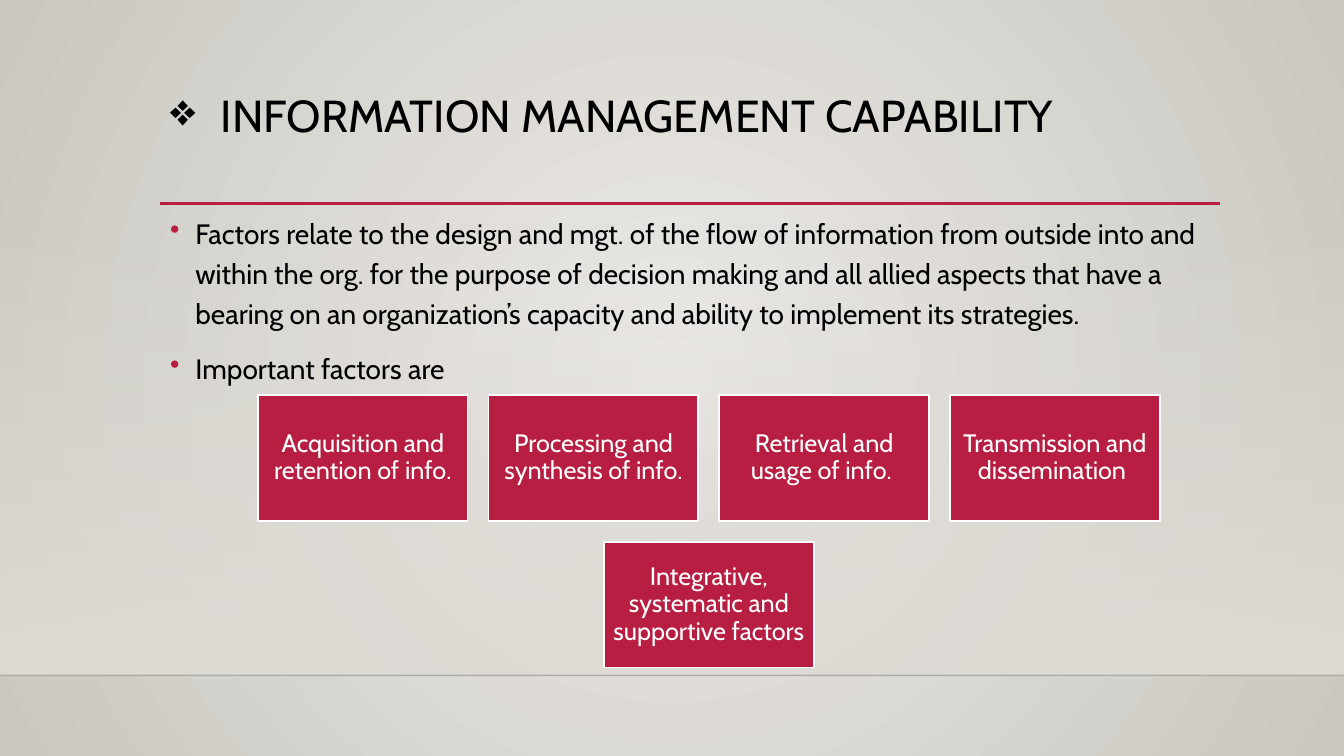
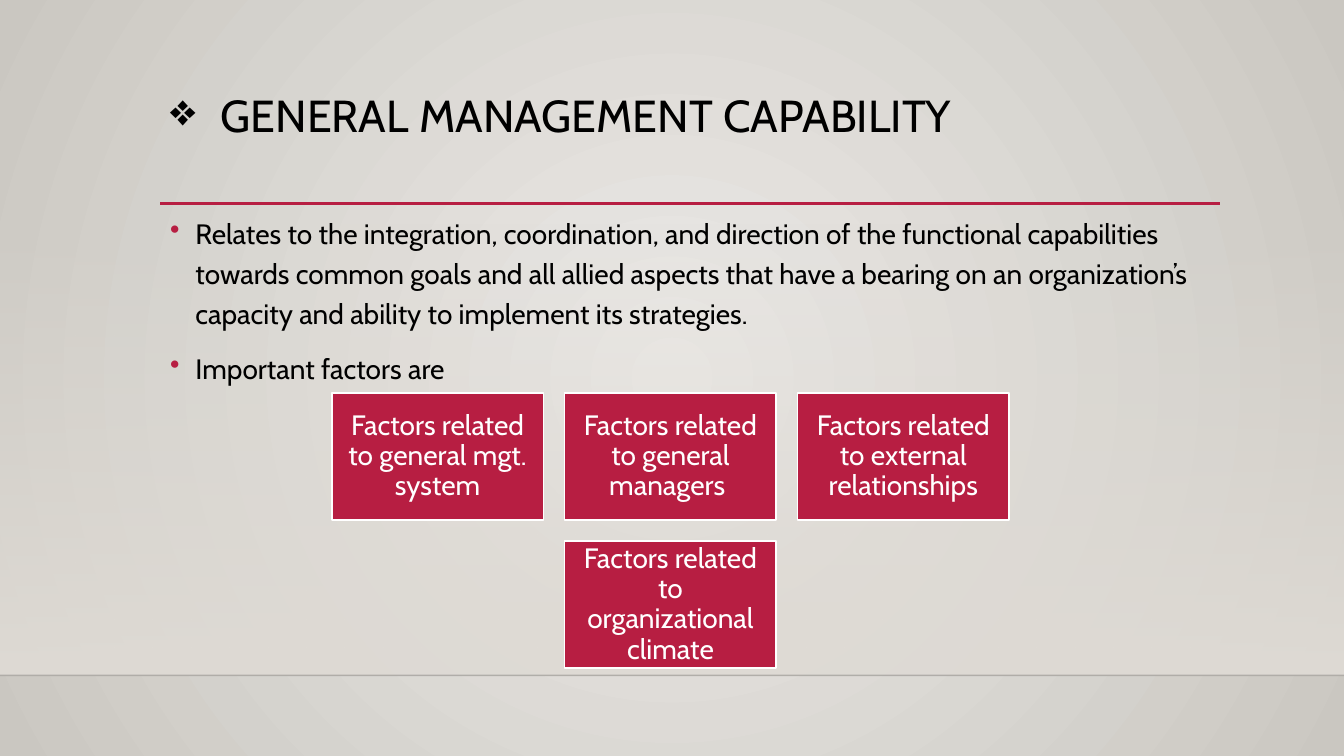
from dataclasses import dataclass

import pptx
import pptx.dml.color
import pptx.enum.shapes
import pptx.enum.text
import pptx.oxml
import pptx.oxml.ns
import pptx.shapes.autoshape
import pptx.shapes.connector
import pptx.slide
import pptx.text.text
import pptx.util

Inches = pptx.util.Inches
Pt = pptx.util.Pt
qn = pptx.oxml.ns.qn
ALIGN = pptx.enum.text.PP_ALIGN
ANCHOR = pptx.enum.text.MSO_ANCHOR
NS = pptx.oxml.ns.nsdecls("a")


@dataclass(frozen=True)
class Theme:
    font: str = "Cabin"
    ink: str = "000000"
    accent: str = "B71E42"
    white: str = "FFFFFF"
    glow: str = "ECEAE7"
    edge: str = "CAC7C1"
    wall: str = "DFDBD5"
    title_size: float = 32
    body_size: float = 20


THEME = Theme()
SLIDE_WIDTH, SLIDE_HEIGHT = 13.33, 7.5
LEFT, WIDTH = 1.59, 10.5
FLOOR = 6.7
RULE = 2.02


@dataclass(frozen=True)
class Bullet:
    char: str
    indent: float
    color: str


@dataclass(frozen=True)
class FactorGrid:
    """Rows of equal boxes, each row centred on the same axis."""
    rows: tuple[tuple[str, ...], ...]
    center: float
    top: float
    box_width: float
    size: float
    inset: float


@dataclass(frozen=True)
class Capability:
    title: str
    points: tuple[str, ...]
    factors: FactorGrid


CAPABILITIES = (
    Capability(
        "INFORMATION MANAGEMENT CAPABILITY",
        ("Factors relate to the design and mgt. of the flow of information from "
         "outside into and within the org. for the purpose of decision making and "
         "all allied aspects that have a bearing on an organization’s capacity and "
         "ability to implement its strategies.",
         "Important factors are"),
        FactorGrid(
            (("Acquisition and retention of info.",
              "Processing and synthesis of info.",
              "Retrieval and usage of info. ",
              "Transmission and dissemination "),
             ("Integrative, systematic and supportive factors",)),
            center=7.03, top=3.92, box_width=2.08, size=18, inset=0.07),
    ),
    Capability(
        "GENERAL MANAGEMENT CAPABILITY",
        ("Relates to the integration, coordination, and direction of the functional "
         "capabilities towards common goals and all allied aspects that have a "
         "bearing on an organization’s capacity and ability to implement its "
         "strategies.",
         "Important factors are"),
        FactorGrid(
            (("Factors related to general mgt. system",
              "Factors related to general managers ",
              "Factors related to external relationships"),
             ("Factors related to organizational climate",)),
            center=6.65, top=3.9, box_width=2.1, size=20, inset=0.08),
    ),
)


def rgb(color: str) -> pptx.dml.color.RGBColor:
    return pptx.dml.color.RGBColor.from_string(color)


def set_alpha(color_element, percent: int) -> None:
    color_element.append(
        pptx.oxml.parse_xml(f'<a:alpha {NS} val="{percent * 1000}"/>'))


def write(frame: pptx.text.text.TextFrame, texts: tuple[str, ...], *, size: float,
          color: str = THEME.ink, align: ALIGN = ALIGN.LEFT,
          anchor: ANCHOR = ANCHOR.TOP, spacing: float = 0.9, before: float = 0,
          inset: float | None = None, bullet: Bullet | None = None) -> None:
    """Fill a text frame with one paragraph per text."""
    frame.word_wrap = True
    frame.vertical_anchor = anchor
    if inset is not None:
        frame.margin_left = frame.margin_right = Inches(inset)
        frame.margin_top = frame.margin_bottom = Inches(inset)
    for index, text in enumerate(texts):
        paragraph = frame.add_paragraph() if index else frame.paragraphs[0]
        if bullet:
            properties = paragraph._p.get_or_add_pPr()
            properties.set("marL", str(Inches(bullet.indent)))
            properties.set("indent", str(-Inches(bullet.indent)))
            for xml in (f'<a:buClr {NS}><a:srgbClr val="{bullet.color}"/></a:buClr>',
                        f'<a:buChar {NS} char="{bullet.char}"/>'):
                properties.append(pptx.oxml.parse_xml(xml))
        paragraph.alignment = align
        paragraph.line_spacing = spacing
        paragraph.space_before = Pt(before if index else 0)
        run = paragraph.add_run()
        run.text = text
        run.font.name = THEME.font
        run.font.size = Pt(size)
        run.font.color.rgb = rgb(color)


def add_rectangle(slide: pptx.slide.Slide, left: float, top: float, width: float,
                  height: float) -> pptx.shapes.autoshape.Shape:
    rectangle = slide.shapes.add_shape(
        pptx.enum.shapes.MSO_SHAPE.RECTANGLE,
        Inches(left), Inches(top), Inches(width), Inches(height))
    rectangle.shadow.inherit = False
    return rectangle


def add_rule(slide: pptx.slide.Slide, left: float, right: float, y: float,
             color: str, weight: float) -> pptx.shapes.connector.Connector:
    rule = slide.shapes.add_connector(
        pptx.enum.shapes.MSO_CONNECTOR.STRAIGHT,
        Inches(left), Inches(y), Inches(right), Inches(y))
    rule.line.color.rgb = rgb(color)
    rule.line.width = Pt(weight)
    rule._element.spPr.append(pptx.oxml.parse_xml(f"<a:effectLst {NS}/>"))
    return rule


def add_backdrop(slide: pptx.slide.Slide) -> None:
    # Radial background, light in the centre
    background = slide.background.fill
    background.gradient()
    for stop, color in zip(background.gradient_stops, (THEME.glow, THEME.edge)):
        stop.color.rgb = rgb(color)
    gradient = slide.element.find(".//" + qn("a:gradFill"))
    gradient.replace(gradient.find(qn("a:lin")), pptx.oxml.parse_xml(
        f'<a:path {NS} path="circle">'
        '<a:fillToRect l="50000" t="50000" r="50000" b="50000"/></a:path>'))

    # Wall fading in towards the floor
    wall = add_rectangle(slide, 0, 2.21, SLIDE_WIDTH, FLOOR - 2.21)
    wall.line.fill.background()
    wall.fill.gradient()
    wall.fill.gradient_angle = 270
    for stop in wall.fill.gradient_stops:
        stop.color.rgb = rgb(THEME.wall)
    set_alpha(wall._element.spPr.find(".//" + qn("a:srgbClr")), 0)

    # Floor edge and title rule
    floor = add_rule(slide, 0, SLIDE_WIDTH, FLOOR, THEME.ink, 1)
    set_alpha(floor._element.spPr.find(".//" + qn("a:srgbClr")), 20)
    add_rule(slide, LEFT, 12.1, RULE, THEME.accent, 2.5)


def add_text(slide: pptx.slide.Slide, top: float, height: float,
             texts: tuple[str, ...], **style) -> None:
    box = slide.shapes.add_textbox(
        Inches(LEFT), Inches(top), Inches(WIDTH), Inches(height))
    write(box.text_frame, texts, **style)


def add_factors(slide: pptx.slide.Slide, grid: FactorGrid) -> None:
    height = grid.box_width * 0.6
    gap = grid.box_width * 0.1
    for row, labels in enumerate(grid.rows):
        row_width = len(labels) * (grid.box_width + gap) - gap
        for column, label in enumerate(labels):
            factor = add_rectangle(
                slide,
                grid.center - row_width / 2 + column * (grid.box_width + gap),
                grid.top + row * (height + gap), grid.box_width, height)
            factor.fill.solid()
            factor.fill.fore_color.rgb = rgb(THEME.accent)
            factor.line.color.rgb = rgb(THEME.white)
            factor.line.width = Pt(1.25)
            write(factor.text_frame, (label,), size=grid.size, color=THEME.white,
                  align=ALIGN.CENTER, anchor=ANCHOR.MIDDLE, inset=grid.inset)


def add_capability(deck, capability: Capability) -> None:
    slide = deck.slides.add_slide(deck.slide_layouts[6])
    add_backdrop(slide)
    add_text(slide, 0.88, 1.15, (capability.title,), size=THEME.title_size,
             bullet=Bullet("❖", 0.5, THEME.ink))
    add_text(slide, 2.03, 4.9, capability.points, size=THEME.body_size,
             spacing=1.2, before=10, bullet=Bullet("•", 0.25, THEME.accent))
    add_factors(slide, capability.factors)


def main() -> None:
    deck = pptx.Presentation()
    deck.slide_width = Inches(SLIDE_WIDTH)
    deck.slide_height = Inches(SLIDE_HEIGHT)
    for capability in CAPABILITIES:
        add_capability(deck, capability)
    deck.save("out.pptx")


if __name__ == "__main__":
    main()
